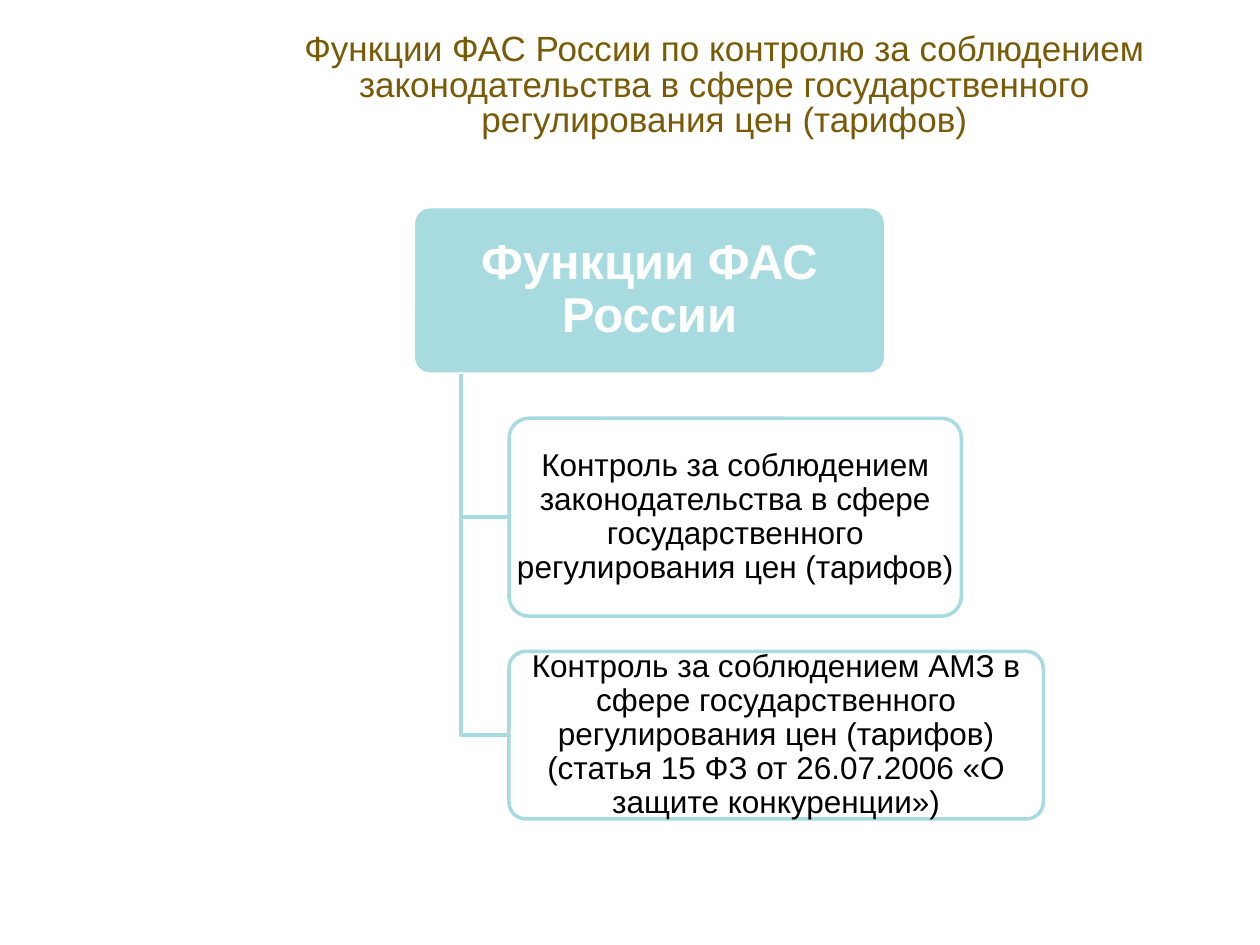
from lxml.etree import SubElement
from pptx import Presentation
from pptx.dml.color import RGBColor
from pptx.enum.shapes import MSO_SHAPE
from pptx.enum.text import MSO_ANCHOR, PP_ALIGN
from pptx.oxml.ns import qn
from pptx.util import Inches, Pt

COLORS = {"title": "795B07", "teal": "A8DBE0", "white": "FFFFFF", "black": "000000"}
TRUNK_X = 3.66
CHILD_X = 4.04
ROOT_BOTTOM = 2.97
CHILDREN = [
    (3.32, 3.59, 1.57,
     "Контроль за соблюдением законодательства в сфере государственного "
     "регулирования цен (тарифов)"),
    (5.17, 4.24, 1.33,
     "Контроль за соблюдением АМЗ в сфере государственного регулирования цен "
     "(тарифов) (статья 15 ФЗ от 26.07.2006 «О защите конкуренции»)"),
]


def rgb(name):
    return RGBColor.from_string(COLORS[name])


def set_text(sp, text, size, color, spacing, bold=False):
    tf = sp.text_frame
    tf.text = text
    tf.word_wrap = True
    tf.vertical_anchor = MSO_ANCHOR.MIDDLE
    p = tf.paragraphs[0]
    p.alignment = PP_ALIGN.CENTER
    p.line_spacing = spacing
    font = p.runs[0].font
    font.name = "Arial"
    font.size = Pt(size)
    font.bold = bold
    font.color.rgb = rgb(color)


def set_line(sp, color):
    sp.shadow.inherit = False
    sp.line.color.rgb = rgb(color)
    sp.line.width = Pt(2)


def set_title(s, text):
    sp = s.shapes.title
    sp.left, sp.top = Inches(2.01), Inches(0.3)
    sp.width, sp.height = Inches(7.48), Inches(0.77)
    set_text(sp, text, 20, "title", 0.85)


def add_box(s, x, y, w, h, fill, line, inset, alpha=None):
    sp = s.shapes.add_shape(
        MSO_SHAPE.ROUNDED_RECTANGLE, Inches(x), Inches(y), Inches(w), Inches(h))
    sp.adjustments[0] = 0.1
    sp.fill.solid()
    sp.fill.fore_color.rgb = rgb(fill)
    if alpha is not None:
        clr = sp.fill._xPr.find(qn("a:solidFill"))[0]
        SubElement(clr, qn("a:alpha")).set("val", str(alpha * 1000))
    set_line(sp, line)
    tf = sp.text_frame
    tf.margin_left = tf.margin_right = Inches(inset)
    tf.margin_top = tf.margin_bottom = Inches(0)
    return sp


def add_branch(s, y):
    builder = s.shapes.build_freeform(Inches(TRUNK_X), Inches(ROOT_BOTTOM))
    builder.add_line_segments(
        [(Inches(TRUNK_X), Inches(y)), (Inches(CHILD_X), Inches(y))], close=False)
    sp = builder.convert_to_shape()
    sp.fill.background()
    set_line(sp, "teal")


def main():
    prs = Presentation()
    prs.slide_width, prs.slide_height = Inches(10), Inches(7.5)
    s = prs.slides.add_slide(prs.slide_layouts[5])
    set_title(s, "Функции ФАС России по контролю за соблюдением законодательства "
                 "в сфере государственного регулирования цен (тарифов)")
    root = add_box(s, 3.28, 1.64, 3.75, 1.33, "teal", "white", 0.02)
    set_text(root, "Функции ФАС России", 28, "white", 0.9, bold=True)
    for y, w, h, text in CHILDREN:
        add_branch(s, y + h / 2)
        child = add_box(s, CHILD_X, y, w, h, "white", "teal", 0, alpha=90)
        set_text(child, text, 18, "black", 0.9)
    prs.save("out.pptx")


if __name__ == "__main__":
    main()
